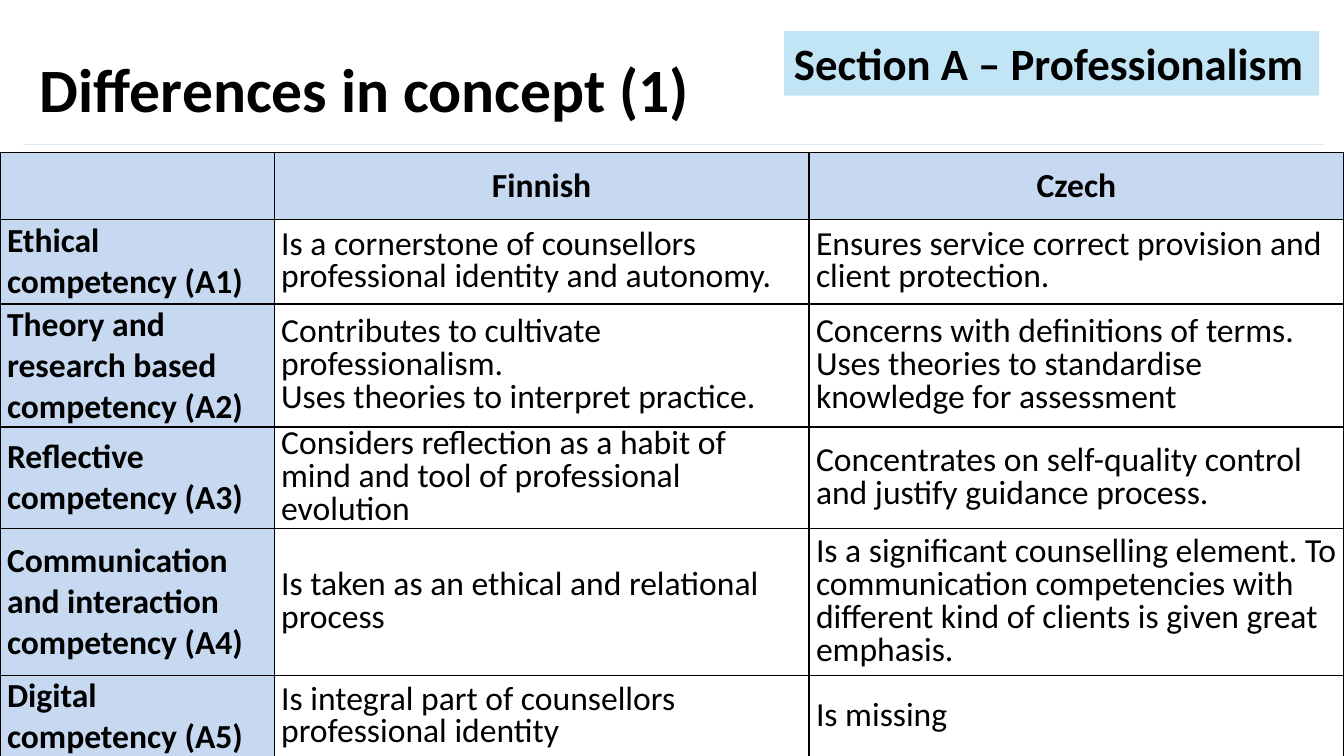
from dataclasses import dataclass

from lxml import etree
from pptx import Presentation
from pptx.dml.color import RGBColor
from pptx.enum import shapes, text
from pptx.oxml import ns
from pptx.slide import Slide
from pptx.table import _Cell
from pptx.text.text import TextFrame
from pptx.util import Pt


@dataclass(frozen=True)
class Theme:
    font: str = "Calibri"
    ink: str = "000000"
    heading_fill: str = "C6D9F1"
    section_fill: str = "C1E5F5"
    rule: str = "DCEAF7"
    title_size: float = 44
    section_size: float = 32
    table_size: float = 24


@dataclass(frozen=True)
class Competency:
    name: str
    finnish: tuple[str, ...]
    czech: tuple[str, ...]
    height: float


THEME = Theme()
SLIDE_WIDTH, SLIDE_HEIGHT = 960, 540
TABLE_TOP, HEADER_HEIGHT = 108.72, 48
NAME_WIDTH = 195.84
COUNTRY_WIDTH = (SLIDE_WIDTH - NAME_WIDTH) / 2
CELL_INSET = 5.04

COMPETENCIES = (
    Competency(
        "Ethical competency (A1)",
        ("Is a cornerstone of counsellors professional identity and autonomy.",),
        ("Ensures service correct provision and client protection.",),
        60.5,
    ),
    Competency(
        "Theory and research based competency (A2)",
        ("Contributes to cultivate professionalism.", "Uses theories to interpret practice."),
        ("Concerns with definitions of terms.",
         "Uses theories to standardise knowledge for assessment"),
        80,
    ),
    Competency(
        "Reflective competency (A3)",
        ("Considers reflection as a habit of mind and tool of professional evolution",),
        ("Concentrates on self-quality control and justify guidance process.",),
        72.5,
    ),
    Competency(
        "Communication and interaction competency (A4)",
        ("Is taken as an ethical and relational process",),
        ("Is a significant counselling element. To communication competencies with "
         "different kind of clients is given great emphasis.",),
        105,
    ),
    Competency(
        "Digital competency (A5)",
        ("Is integral part of counsellors professional identity",),
        ("Is missing",),
        45.5,
    ),
)


def write(frame: TextFrame, *lines: str, size: float, bold: bool = False,
          align: text.PP_ALIGN = text.PP_ALIGN.LEFT, spacing: float = 1.0) -> None:
    for index, line in enumerate(lines):
        paragraph = frame.paragraphs[0] if index == 0 else frame.add_paragraph()
        paragraph.alignment = align
        paragraph.line_spacing = spacing
        run = paragraph.add_run()
        run.text = line
        run.font.name = THEME.font
        run.font.size = Pt(size)
        run.font.bold = bold
        run.font.color.rgb = RGBColor.from_string(THEME.ink)


def add_borders(cell: _Cell) -> None:
    """Borders must be added before the cell's fill."""
    properties = cell._tc.get_or_add_tcPr()
    for side in ("lnL", "lnR", "lnT", "lnB"):
        border = etree.SubElement(properties, ns.qn(f"a:{side}"), w=str(Pt(1)))
        fill = etree.SubElement(border, ns.qn("a:solidFill"))
        etree.SubElement(fill, ns.qn("a:srgbClr"), val=THEME.ink)


def fill_cell(cell: _Cell, lines: tuple[str, ...], heading: bool, centred: bool) -> None:
    cell.margin_left = cell.margin_right = Pt(CELL_INSET)
    cell.margin_top = cell.margin_bottom = Pt(0)
    cell.vertical_anchor = text.MSO_ANCHOR.MIDDLE
    add_borders(cell)
    if heading:
        cell.fill.solid()
        cell.fill.fore_color.rgb = RGBColor.from_string(THEME.heading_fill)
    else:
        cell.fill.background()
    write(cell.text_frame, *lines, size=THEME.table_size, bold=heading,
          align=text.PP_ALIGN.CENTER if centred else text.PP_ALIGN.LEFT,
          spacing=1.0 if heading else 0.8)


def add_rule(slide: Slide) -> None:
    rule = slide.shapes.add_connector(
        shapes.MSO_CONNECTOR.STRAIGHT, Pt(16.5), Pt(103), Pt(946), Pt(103))
    rule.line.color.rgb = RGBColor.from_string(THEME.rule)
    rule.line.width = Pt(0.5)
    etree.SubElement(rule._element.spPr, ns.qn("a:effectLst"))


def add_comparison(slide: Slide) -> None:
    heights = [HEADER_HEIGHT] + [competency.height for competency in COMPETENCIES]
    comparison = slide.shapes.add_table(
        len(heights), 3, Pt(0), Pt(TABLE_TOP), Pt(SLIDE_WIDTH), Pt(sum(heights))).table
    comparison.first_row = comparison.horz_banding = False
    for column, width in zip(comparison.columns, (NAME_WIDTH, COUNTRY_WIDTH, COUNTRY_WIDTH)):
        column.width = Pt(width)
    for row, height in zip(comparison.rows, heights):
        row.height = Pt(height)

    contents = [((), ("Finnish",), ("Czech",))]
    contents += [((item.name,), item.finnish, item.czech) for item in COMPETENCIES]
    for row_index, row_content in enumerate(contents):
        for column_index, lines in enumerate(row_content):
            fill_cell(comparison.cell(row_index, column_index), lines,
                      heading=row_index == 0 or column_index == 0, centred=row_index == 0)


def add_title(slide: Slide) -> None:
    title = slide.shapes.add_textbox(Pt(21.5), Pt(29), Pt(938.5), Pt(73.5)).text_frame
    title.word_wrap = True
    title.vertical_anchor = text.MSO_ANCHOR.MIDDLE
    write(title, "Differences in concept (1)", size=THEME.title_size, bold=True, spacing=0.9)


def add_section_label(slide: Slide) -> None:
    section = slide.shapes.add_shape(
        shapes.MSO_SHAPE.RECTANGLE, Pt(560), Pt(22.3), Pt(382.3), Pt(46))
    section.shadow.inherit = False
    section.fill.solid()
    section.fill.fore_color.rgb = RGBColor.from_string(THEME.section_fill)
    section.line.fill.background()
    frame = section.text_frame
    frame.word_wrap = False
    frame.auto_size = text.MSO_AUTO_SIZE.SHAPE_TO_FIT_TEXT
    frame.vertical_anchor = text.MSO_ANCHOR.TOP
    write(frame, "Section A – Professionalism", size=THEME.section_size, bold=True)


def main() -> None:
    presentation = Presentation()
    presentation.slide_width, presentation.slide_height = Pt(SLIDE_WIDTH), Pt(SLIDE_HEIGHT)
    slide = presentation.slides.add_slide(presentation.slide_layouts[6])
    add_rule(slide)
    add_comparison(slide)
    add_title(slide)
    add_section_label(slide)
    presentation.save("out.pptx")


if __name__ == "__main__":
    main()
